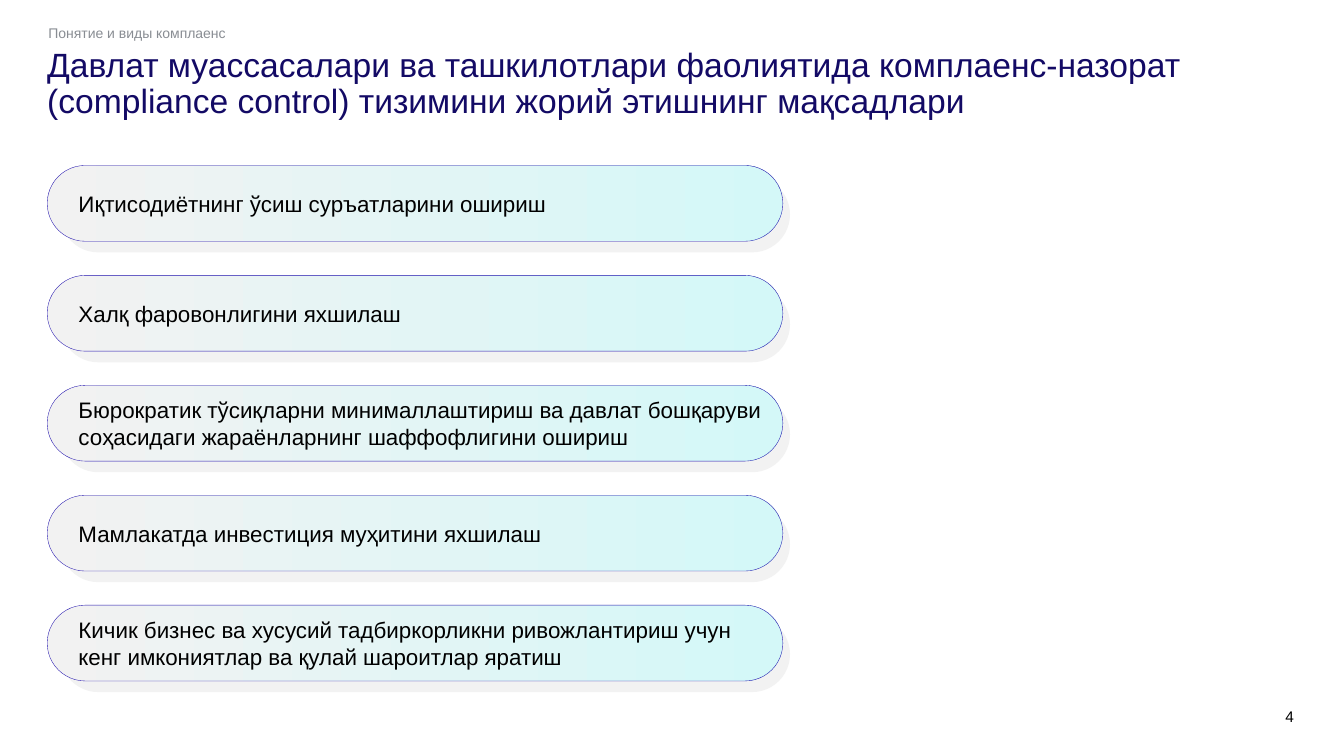
"""Builds the slide on the goals of compliance control."""
from dataclasses import dataclass

from lxml import etree
from pptx import Presentation
from pptx import util as u
from pptx.dml.color import RGBColor as Rgb
from pptx.enum import shapes, text
from pptx.oxml.ns import qn


@dataclass(frozen=True)
class Theme:
    face: str = "Arial"
    navy: str = "130A65"
    grey: str = "898D93"
    black: str = "000000"
    pale: str = "F2F2F2"
    aqua: str = "D4F8F8"
    edge: str = "2112AE"
    head: int = 24
    goal: int = 16
    page: int = 11
    note: int = 10


look = Theme()


def write(shape, words, size, color, align=text.PP_ALIGN.LEFT, anchor=text.MSO_ANCHOR.TOP,
          pads=(0, 0, 0, 0), lead=1.0, after=0, wrap=True):
    frame = shape.text_frame
    frame.text = words
    frame.word_wrap = wrap
    frame.auto_size = text.MSO_AUTO_SIZE.NONE
    frame.vertical_anchor = anchor
    frame.margin_left, frame.margin_top, frame.margin_right, frame.margin_bottom = map(u.Cm, pads)
    para = frame.paragraphs[0]
    props = para._p.get_or_add_pPr()
    props.set("marL", "0")
    props.set("indent", "0")
    etree.SubElement(props, qn("a:buNone"))
    para.alignment = align
    para.line_spacing = lead
    para.space_before = u.Pt(0)
    para.space_after = u.Pt(after)
    font = para.runs[0].font
    font.name = look.face
    font.size = u.Pt(size)
    font.bold = False
    font.color.rgb = Rgb.from_string(color)


def place(shape, left, top, width, height):
    shape.left, shape.top, shape.width, shape.height = map(u.Cm, (left, top, width, height))


deck = Presentation()
deck.slide_width = u.Cm(33.87)
deck.slide_height = u.Cm(19.05)
slide = deck.slides.add_slide(deck.slide_layouts[1])

title = slide.shapes.title
place(title, 1.19, 1.22, 29.44, 1.22)
write(title, "Давлат муассасалари ва ташкилотлари фаолиятида комплаенс-назорат "
      "(compliance control) тизимини жорий этишнинг мақсадлари",
      look.head, look.navy, lead=0.9)

topic = slide.placeholders[1]
place(topic, 1.22, 0.61, 27.64, 0.43)
write(topic, "Понятие и виды комплаенс", look.note, look.grey, after=3)

goals = [
    "Иқтисодиётнинг ўсиш суръатларини ошириш",
    "Халқ фаровонлигини яхшилаш",
    "Бюрократик тўсиқларни минималлаштириш ва давлат бошқаруви "
    "соҳасидаги жараёнларнинг шаффофлигини ошириш",
    "Мамлакатда инвестиция муҳитини яхшилаш",
    "Кичик бизнес ва хусусий тадбиркорликни ривожлантириш учун "
    "кенг имкониятлар ва қулай шароитлар яратиш",
]
first, step, tall = 4.17, 2.77, 1.91
for row, goal in enumerate(goals):
    top = first + row * step
    group = slide.shapes.add_group_shape()
    pair = []
    for left, drop, width in ((1.52, 0.28, 18.39), (1.19, 0, 18.54)):
        pill = group.shapes.add_shape(shapes.MSO_SHAPE.ROUNDED_RECTANGLE, u.Cm(left),
                                      u.Cm(top + drop), u.Cm(width), u.Cm(tall))
        pill.adjustments[0] = 0.5
        pill.shadow.inherit = False
        pair.append(pill)
    shade, card = pair
    shade.fill.solid()
    shade.fill.fore_color.rgb = Rgb.from_string(look.pale)
    shade.line.fill.background()
    card.fill.gradient()
    card.fill.gradient_angle = 0
    for stop, color, point in zip(card.fill.gradient_stops, (look.pale, look.aqua), (0, 1)):
        stop.color.rgb = Rgb.from_string(color)
        stop.position = point
    card.line.color.rgb = Rgb.from_string(look.edge)
    card.line.width = u.Pt(0.25)
    write(card, goal, look.goal, look.black, anchor=text.MSO_ANCHOR.MIDDLE,
          pads=(0.51, 0.13, 0.25, 0.13))

page = slide.shapes.add_textbox(u.Cm(31.52), u.Cm(17.83), u.Cm(1.09), u.Cm(0.41))
write(page, "4", look.page, look.black, align=text.PP_ALIGN.RIGHT)

deck.save("out.pptx")
